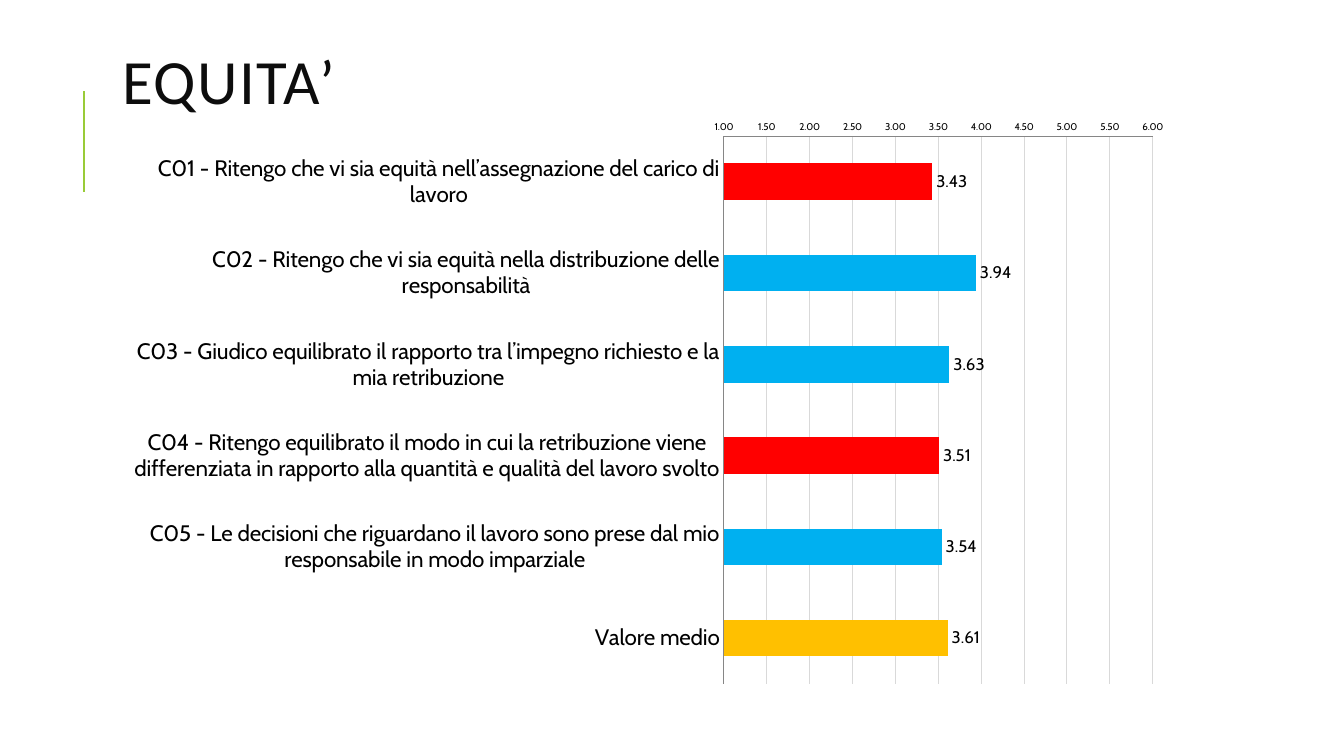
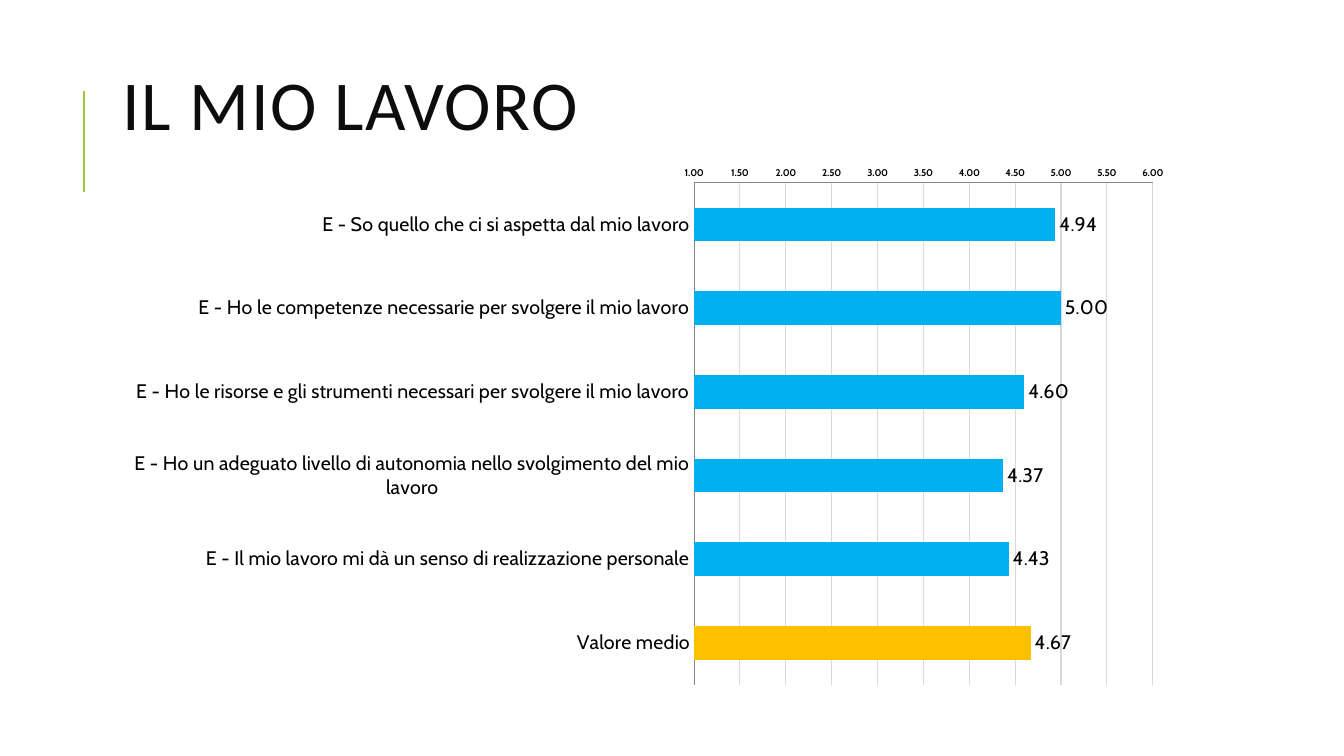
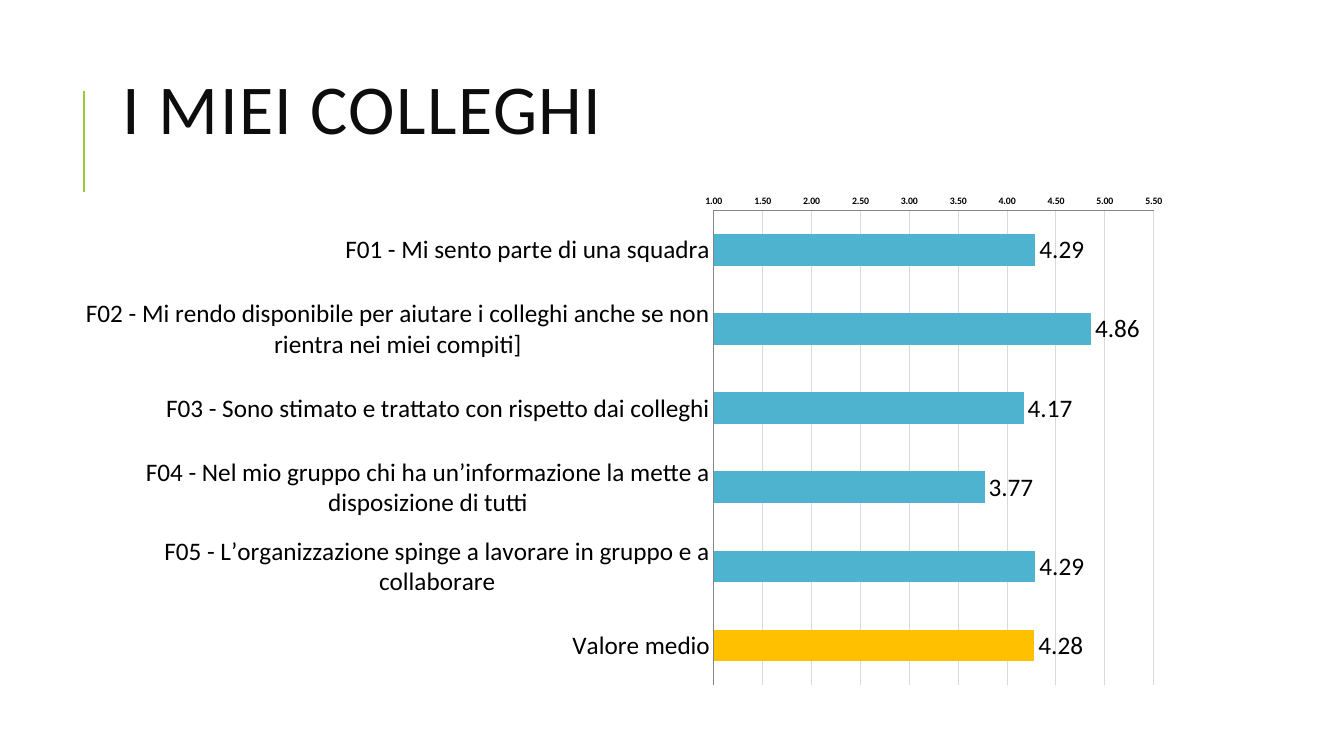
import lxml.etree
import pptx
import pptx.chart.data
import pptx.dml.color
import pptx.enum.chart
import pptx.enum.shapes
import pptx.enum.text
import pptx.oxml.ns
import pptx.util
from pptx.util import Inches

COLORS = {
    "accent": "99CB38",
    "title": "0D0D0D",
    "text": "000000",
    "grid": "D9D9D9",
    "axis": "868686",
    "blue": "00B0F0",
    "teal": "4EB3CF",
    "low": "FF0000",
    "mean": "FFC000",
}
TITLE_FONT = "Calibri"
MEAN_LABEL = "Valore medio"

SLIDES = [
    {
        "title": "EQUITA’", "title_size": 45, "title_height": 0.44,
        "left": 1.12, "top": 1.08, "font": "Cabin", "bar": "blue",
        "category_size": 16, "label_size": 12, "bold_scale": False,
        "maximum": 6, "low_points": [0, 3], "mean": 3.61,
        "answers": [
            ("C01 - Ritengo che vi sia equità nell’assegnazione del carico di lavoro", 3.43),
            ("C02 - Ritengo che vi sia equità nella distribuzione delle responsabilità", 3.94),
            ("C03 - Giudico equilibrato il rapporto tra l’impegno richiesto e la mia retribuzione", 3.63),
            ("C04 - Ritengo equilibrato il modo in cui la retribuzione viene differenziata "
             "in rapporto alla quantità e qualità del lavoro svolto", 3.51),
            ("C05 - Le decisioni che riguardano il lavoro sono prese dal mio responsabile "
             "in modo imparziale", 3.54),
        ],
    },
    {
        "title": "IL MIO LAVORO", "title_size": 50, "title_height": 0.91,
        "left": 1.12, "top": 1.55, "font": "Cabin", "bar": "blue",
        "category_size": 14, "label_size": 14, "bold_scale": True,
        "maximum": 6, "low_points": [], "mean": 4.67,
        "answers": [
            ("E - So quello che ci si aspetta dal mio lavoro", 4.94),
            ("E - Ho le competenze necessarie per svolgere il mio lavoro", 5),
            ("E - Ho le risorse e gli strumenti necessari per svolgere il mio lavoro", 4.6),
            ("E - Ho un adeguato livello di autonomia nello svolgimento del mio lavoro", 4.37),
            ("E - Il mio lavoro mi dà un senso di realizzazione personale", 4.43),
        ],
    },
    {
        "title": "I MIEI COLLEGHI", "title_size": 50, "title_height": 0.98,
        "left": 0.63, "top": 1.83, "font": "Calibri", "bar": "teal",
        "category_size": 18, "label_size": 18, "bold_scale": True,
        "maximum": 5.5, "low_points": [], "mean": 4.28,
        "answers": [
            ("F01 - Mi sento parte di una squadra", 4.29),
            ("F02 - Mi rendo disponibile per aiutare i colleghi anche se non rientra "
             "nei miei compiti]", 4.86),
            ("F03 - Sono stimato e trattato con rispetto dai colleghi", 4.17),
            ("F04 - Nel mio gruppo chi ha un’informazione la mette a disposizione di tutti", 3.77),
            ("F05 - L’organizzazione spinge a lavorare in gruppo e a collaborare", 4.29),
        ],
    },
]


def color(name):
    return pptx.dml.color.RGBColor.from_string(COLORS[name])


def style_font(font, name, size, color_name, bold=False):
    font.name = name
    font.size = pptx.util.Pt(size)
    font.bold = bold
    font.color.rgb = color(color_name)


def style_line(line, color_name, width):
    line.color.rgb = color(color_name)
    line.width = pptx.util.Pt(width)


def fill_solid(target, color_name):
    target.format.fill.solid()
    target.format.fill.fore_color.rgb = color(color_name)


def add_accent_line(page):
    line = page.shapes.add_connector(
        pptx.enum.shapes.MSO_CONNECTOR.STRAIGHT,
        Inches(0.83), Inches(1.9), Inches(0.83), Inches(0.9))
    style_line(line.line, "accent", 1.5)
    lxml.etree.SubElement(line._element.spPr, pptx.oxml.ns.qn("a:effectLst"))


def add_title(page, text, size, height):
    box = page.shapes.add_textbox(Inches(1.12), Inches(0.64), Inches(10.63), Inches(height))
    frame = box.text_frame
    frame.text = text
    frame.word_wrap = True
    frame.vertical_anchor = pptx.enum.text.MSO_ANCHOR.MIDDLE
    para = frame.paragraphs[0]
    para.line_spacing = 0.8
    span = para.runs[0]
    style_font(span.font, TITLE_FONT, size, "title")
    span.font._element.set("spc", "100")


def style_axis(axis, font, size, bold=False):
    axis.major_tick_mark = pptx.enum.chart.XL_TICK_MARK.NONE
    axis.minor_tick_mark = pptx.enum.chart.XL_TICK_MARK.NONE
    style_font(axis.tick_labels.font, font, size, "text", bold)
    style_line(axis.format.line, "axis", 0.75)


def style_scale(axis, maximum):
    axis.minimum_scale = 1
    axis.maximum_scale = maximum
    axis.major_unit = 0.5
    axis.tick_labels.number_format = "0.00"
    axis.tick_labels.number_format_is_linked = False
    style_line(axis.major_gridlines.format.line, "grid", 0.75)


def style_bars(plot, content):
    plot.gap_width = 150
    plot.vary_by_categories = False
    series = plot.series[0]
    fill_solid(series, content["bar"])
    for index in content["low_points"]:
        fill_solid(series.points[index], "low")
    fill_solid(series.points[len(content["answers"])], "mean")
    labels = series.data_labels
    labels.show_value = True
    labels.number_format = "0.00"
    labels.number_format_is_linked = False
    labels.position = pptx.enum.chart.XL_LABEL_POSITION.OUTSIDE_END
    style_font(labels.font, content["font"], content["label_size"], "text")


def add_bar_chart(page, content):
    rows = content["answers"] + [(MEAN_LABEL, content["mean"])]
    data = pptx.chart.data.CategoryChartData(number_format="0.00")
    data.categories = [label for label, value in rows]
    data.add_series("Series 1", [value for label, value in rows])
    left, top = content["left"], content["top"]
    chart = page.shapes.add_chart(
        pptx.enum.chart.XL_CHART_TYPE.BAR_CLUSTERED,
        Inches(left), Inches(top), Inches(11.75 - left), Inches(6.9 - top), data).chart
    chart.has_legend = False
    chart.has_title = False
    style_font(chart.font, content["font"], 10, "text")
    style_axis(chart.category_axis, content["font"], content["category_size"])
    chart.category_axis.reverse_order = True
    style_axis(chart.value_axis, content["font"], 7, content["bold_scale"])
    style_scale(chart.value_axis, content["maximum"])
    style_bars(chart.plots[0], content)


def main():
    deck = pptx.Presentation()
    deck.slide_width = Inches(13.33)
    deck.slide_height = Inches(7.5)
    for content in SLIDES:
        page = deck.slides.add_slide(deck.slide_layouts[6])
        add_accent_line(page)
        add_title(page, content["title"], content["title_size"], content["title_height"])
        add_bar_chart(page, content)
    deck.save("out.pptx")


if __name__ == "__main__":
    main()
